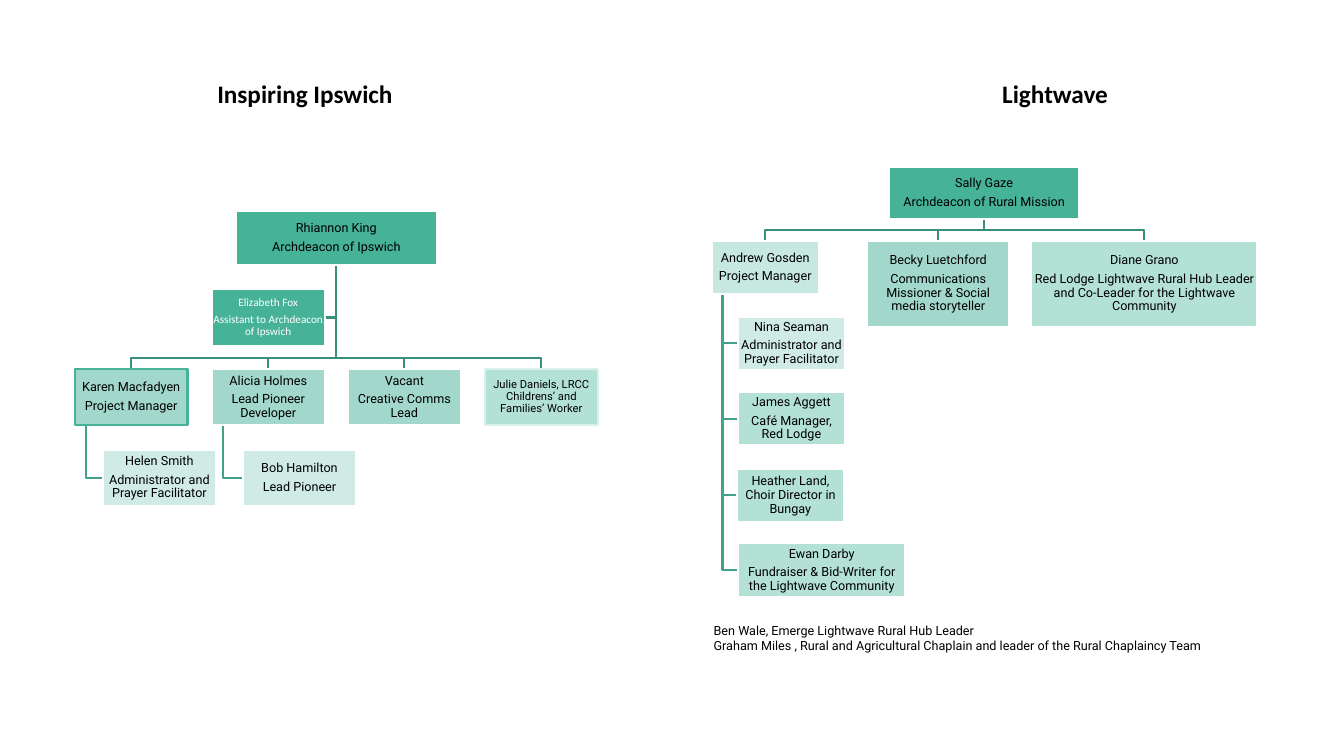
from dataclasses import dataclass

from lxml import etree
from pptx import Presentation
from pptx.dml.color import RGBColor
from pptx.enum import shapes, text
from pptx.oxml.ns import qn
from pptx.util import Inches, Pt

COLOURS = {
    "green": "46B298", "soft": "8ED3C2", "pale": "B4E1D6", "mist": "D9F0EB",
    "bus": "388F7A", "branch": "40A28A", "white": "FFFFFF", "black": "000000",
}


def rgb(name):
    return RGBColor.from_string(COLOURS[name])


@dataclass
class Post:
    """A box in an organisation chart; lengths are in inches, opacity in percent."""
    lines: tuple
    left: float
    top: float
    width: float = 1.12
    height: float = 0.56
    fill: str = "green"
    opacity: int = 100
    outline: str = "white"
    size: int = 9
    font: str = "Roboto"
    ink: str = "black"

    @property
    def centre(self):
        return self.left + self.width / 2

    @property
    def middle(self):
        return self.top + self.height / 2

    @property
    def bottom(self):
        return self.top + self.height


def write_lines(frame, lines, size, font, ink="black", align=text.PP_ALIGN.LEFT, bold=False):
    frame.word_wrap = True
    for index, line in enumerate(lines):
        paragraph = frame.paragraphs[0] if index == 0 else frame.add_paragraph()
        paragraph.text = line
        paragraph.alignment = align
        paragraph.font.size = Pt(size)
        paragraph.font.name = font
        paragraph.font.bold = bold
        paragraph.font.color.rgb = rgb(ink)


def add_post(slide, post):
    shape = slide.shapes.add_shape(
        shapes.MSO_SHAPE.RECTANGLE, Inches(post.left), Inches(post.top),
        Inches(post.width), Inches(post.height))
    shape.shadow.inherit = False
    shape.fill.solid()
    shape.fill.fore_color.rgb = rgb(post.fill)
    if post.opacity < 100:
        colour = shape.fill._xPr.find(qn("a:solidFill"))[0]
        etree.SubElement(colour, qn("a:alpha")).set("val", str(post.opacity * 1000))
    shape.line.color.rgb = rgb(post.outline)
    shape.line.width = Pt(1.5)
    frame = shape.text_frame
    frame.margin_left = frame.margin_right = Inches(0.01)
    frame.margin_top = frame.margin_bottom = Inches(0.01)
    frame.vertical_anchor = text.MSO_ANCHOR.MIDDLE
    write_lines(frame, post.lines, post.size, post.font, post.ink, text.PP_ALIGN.CENTER)
    for paragraph in frame.paragraphs:
        paragraph.line_spacing = 0.9
        paragraph.space_after = Pt(3.5)


def add_bent_line(slide, points, colour):
    start, *rest = [(Inches(x), Inches(y)) for x, y in points]
    builder = slide.shapes.build_freeform(*start)
    builder.add_line_segments(rest, close=False)
    shape = builder.convert_to_shape()
    shape.shadow.inherit = False
    shape.fill.background()
    shape.line.color.rgb = rgb(colour)
    shape.line.width = Pt(1.5)


def link_below(slide, parent, children):
    """Join a post to the tops of the posts in the row beneath it."""
    for child in children:
        bus = child.top - 0.11
        add_bent_line(slide, [(parent.centre, parent.bottom), (parent.centre, bus),
                              (child.centre, bus), (child.centre, child.top)], "bus")


def link_hanging(slide, parent, children):
    """Join a post to the left sides of the posts that hang under it."""
    stem = parent.left + parent.width / 10
    for child in children:
        add_bent_line(slide, [(stem, parent.bottom), (stem, child.middle),
                              (child.left, child.middle)], "branch")


def link_assistant(slide, parent, assistant):
    add_bent_line(slide, [(parent.centre, parent.bottom), (parent.centre, assistant.middle),
                          (assistant.left + assistant.width, assistant.middle)], "bus")


def add_text(slide, lines, left, top, width, height, size, font, **style):
    box = slide.shapes.add_textbox(Inches(left), Inches(top), Inches(width), Inches(height))
    write_lines(box.text_frame, lines, size, font, **style)


def add_title(slide, title, left):
    add_text(slide, [title], left, 0.73, 6.97, 0.41, 18, "Calibri",
             align=text.PP_ALIGN.CENTER, bold=True)


def draw_ipswich(slide):
    archdeacon = Post(("Rhiannon King", "Archdeacon of Ipswich"), 2.34, 2.09, 1.99, 0.54)
    assistant = Post(("Elizabeth Fox", "Assistant to Archdeacon of Ipswich"), 2.1, 2.87,
                     size=8, font="Calibri", ink="white")
    row = 3.66
    manager = Post(("Karen Macfadyen", "Project Manager"), 0.74, row,
                   opacity=50, outline="green")
    developer = Post(("Alicia Holmes", "Lead Pioneer Developer"), 2.1, row, opacity=50)
    comms = Post(("Vacant", "Creative Comms Lead"), 3.45, row, opacity=50)
    families = Post(("Julie Daniels, LRCC Childrens’ and Families’ Worker",), 4.81, row,
                    fill="pale", outline="mist", size=8)
    administrator = Post(("Helen Smith", "Administrator and Prayer Facilitator"),
                         1.02, 4.46, opacity=25)
    pioneer = Post(("Bob Hamilton", "Lead Pioneer"), 2.41, 4.46, opacity=25)

    team = [manager, developer, comms, families]
    link_assistant(slide, archdeacon, assistant)
    link_below(slide, archdeacon, team)
    link_hanging(slide, manager, [administrator])
    link_hanging(slide, developer, [pioneer])
    for post in [archdeacon, assistant, *team, administrator, pioneer]:
        add_post(slide, post)


def draw_lightwave(slide):
    archdeacon = Post(("Sally Gaze", "Archdeacon of Rural Mission"), 8.82, 1.66, 1.88, 0.51)
    row = 2.39
    manager = Post(("Andrew Gosden", "Project Manager"), 7.06, row, 1.06, 0.53,
                   fill="soft", opacity=50)
    comms = Post(("Becky Luetchford", "Communications Missioner & Social media storyteller"),
                 8.6, row, 1.41, 0.85, opacity=50)
    hub_leader = Post(("Diane Grano", "Red Lodge Lightwave Rural Hub Leader and "
                       "Co-Leader for the Lightwave Community"),
                      10.23, row, 2.24, 0.85, fill="pale")
    staff = [
        Post(("Nina Seaman", "Administrator and Prayer Facilitator"),
             7.32, 3.14, 1.06, 0.53, opacity=25),
        Post(("James Aggett", "Café Manager, Red Lodge"), 7.32, 3.89, 1.06, 0.53, fill="pale"),
        Post(("Heather Land, Choir Director in Bungay",), 7.31, 4.65, 1.06, 0.53, fill="pale"),
        Post(("Ewan Darby", "Fundraiser & Bid-Writer for the Lightwave Community"),
             7.32, 5.39, 1.66, 0.53, fill="pale"),
    ]

    team = [manager, comms, hub_leader]
    link_below(slide, archdeacon, team)
    link_hanging(slide, manager, staff)
    for post in [archdeacon, *team, *staff]:
        add_post(slide, post)


def main():
    presentation = Presentation()
    presentation.slide_width = Inches(13.33)
    presentation.slide_height = Inches(7.5)
    slide = presentation.slides.add_slide(presentation.slide_layouts[6])
    add_title(slide, "Inspiring Ipswich", -0.46)
    draw_ipswich(slide)
    add_title(slide, "Lightwave", 6.98)
    draw_lightwave(slide)
    add_text(slide, ["Ben Wale, Emerge Lightwave Rural Hub Leader",
                     "Graham Miles , Rural and Agricultural Chaplain and leader "
                     "of the Rural Chaplaincy Team"],
             6.98, 6.13, 5.46, 0.71, 9, "Roboto")
    presentation.save("out.pptx")


if __name__ == "__main__":
    main()
